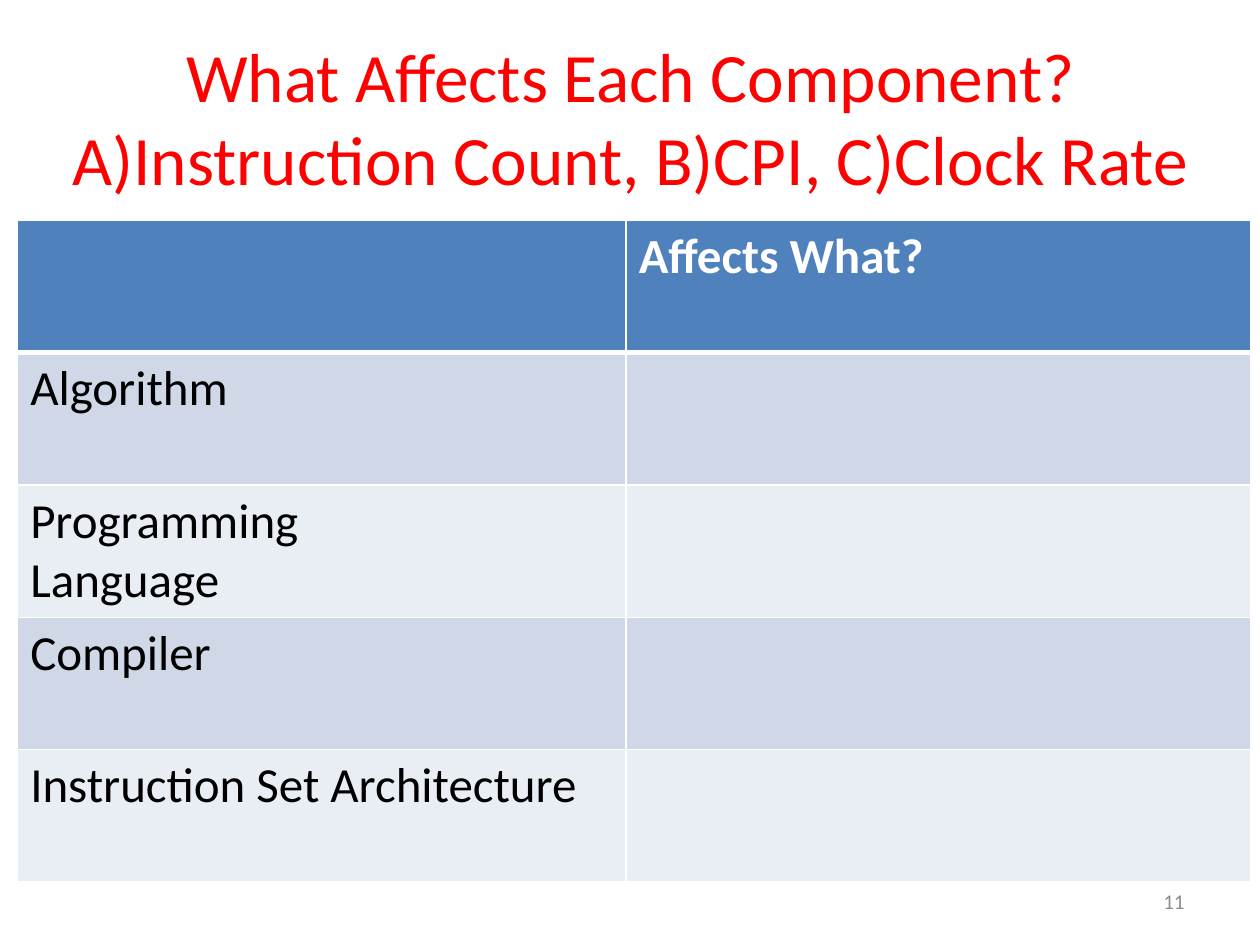
"""Build the slide asking which performance component each factor affects."""
import pptx
import pptx.dml.color
import pptx.enum.text
import pptx.oxml
import pptx.oxml.ns
import pptx.util

Inches = pptx.util.Inches
PP_ALIGN = pptx.enum.text.PP_ALIGN

THEME = {
    "font": "Calibri",
    "title": "FF0000", "header": "4F81BD", "bands": ("E9EDF4", "D0D8E8"),
    "light": "FFFFFF", "dark": "000000", "muted": "8C8C8C",
    "title_size": 39.6, "table_size": 28, "number_size": 12,
}


def style(p, size, color, align=PP_ALIGN.LEFT, bold=False):
    p.alignment = align
    p.font.name = THEME["font"]
    p.font.size = pptx.util.Pt(size)
    p.font.bold = bold
    p.font.color.rgb = pptx.dml.color.RGBColor.from_string(color)


def add_border(cell, side, width):
    ns = pptx.oxml.ns.nsdecls("a")
    cell._tc.get_or_add_tcPr().append(pptx.oxml.parse_xml(
        f'<a:ln{side} {ns} w="{pptx.util.Pt(width)}"><a:solidFill>'
        f'<a:srgbClr val="{THEME["light"]}"/></a:solidFill></a:ln{side}>'))


prs = pptx.Presentation()
prs.slide_width, prs.slide_height = Inches(10), Inches(7.5)
s = prs.slides.add_slide(prs.slide_layouts[6])

labels = [
    ("What Affects Each Component? A)Instruction Count, B)CPI, C)Clock Rate",
     (0.31, 0.3, 9.39, 1.25), THEME["title_size"], THEME["title"], PP_ALIGN.CENTER),
    ("11", (7.17, 6.95, 2.33, 0.4), THEME["number_size"], THEME["muted"], PP_ALIGN.RIGHT),
]
for text, box, size, color, align in labels:
    tf = s.shapes.add_textbox(*map(Inches, box)).text_frame
    tf.word_wrap = True
    tf.vertical_anchor = pptx.enum.text.MSO_ANCHOR.MIDDLE
    tf.text = text
    style(tf.paragraphs[0], size, color, align)

rows = [
    ("", "Affects What?"),
    ("Algorithm", ""),
    ("Programming\vLanguage", ""),
    ("Compiler", ""),
    ("Instruction Set Architecture", ""),
]
row_height = 1.05
table = s.shapes.add_table(len(rows), 2, Inches(0.14), Inches(1.75),
                           Inches(9.79), Inches(row_height * len(rows))).table
for column, width in zip(table.columns, (4.83, 4.96)):
    column.width = Inches(width)

for i, row in enumerate(rows):
    table.rows[i].height = Inches(row_height)
    header = i == 0
    fill = THEME["header"] if header else THEME["bands"][i % 2]
    for j, text in enumerate(row):
        cell = table.cell(i, j)
        cell.text = text
        style(cell.text_frame.paragraphs[0], THEME["table_size"],
              THEME["light"] if header else THEME["dark"], bold=header)
        for side in "LRTB":
            thick = (header and side == "B") or (i == 1 and side == "T")
            add_border(cell, side, 3 if thick else 1)
        cell.fill.solid()
        cell.fill.fore_color.rgb = pptx.dml.color.RGBColor.from_string(fill)

prs.save("out.pptx")
